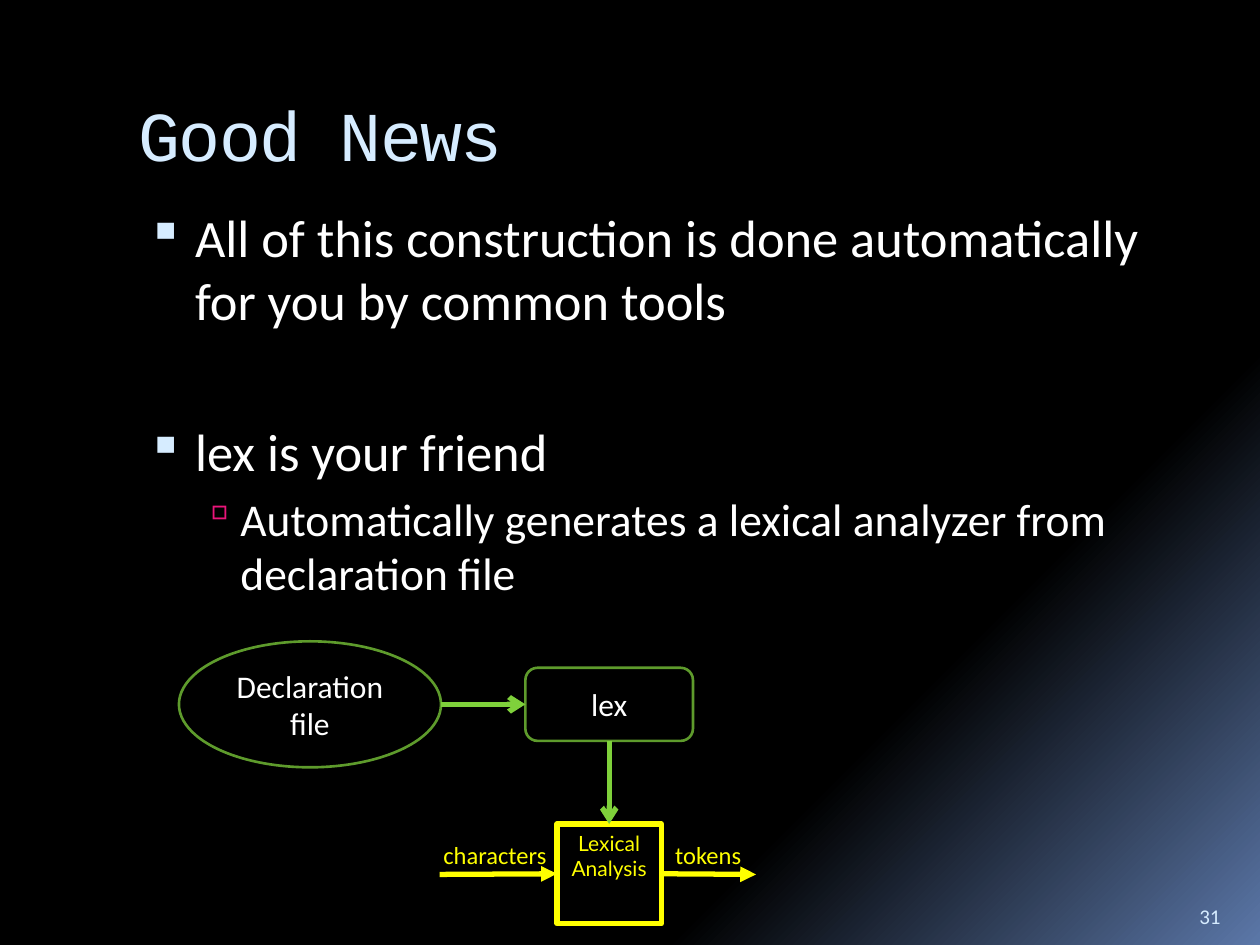
import pptx
import pptx.util
import pptx.dml.color
import pptx.enum.shapes
import pptx.enum.text
import pptx.oxml.ns
from collections import namedtuple
from dataclasses import dataclass
from lxml import etree
from pptx.util import Inches, Pt

MSO_SHAPE = pptx.enum.shapes.MSO_SHAPE
ANCHOR = pptx.enum.text.MSO_ANCHOR
ALIGN = pptx.enum.text.PP_ALIGN
RGB = pptx.dml.color.RGBColor.from_string
qn = pptx.oxml.ns.qn

Box = namedtuple("Box", "left top width height")
Bullet = namedtuple("Bullet", "text level space_before")


@dataclass(frozen=True)
class Theme:
    """Colours, fonts and type sizes of the deck."""
    night: str = "000000"
    horizon: str = "5B77A8"
    heading: str = "D6ECFF"
    text: str = "FFFFFF"
    sub_bullet: str = "EA157A"
    outline: str = "5E9B2C"
    flow: str = "7FD13B"
    phase: str = "FFFF00"
    heading_font: str = "Courier New"
    body_font: str = "Calibri"
    phase_font: str = "Lato"
    heading_size: int = 40
    body_sizes: tuple = (30, 26)
    node_size: int = 18
    stream_size: int = 14
    small_size: int = 12


THEME = Theme()


def inches(box):
    """Convert a box in inches to lengths."""
    return [Inches(value) for value in box]


def within(box, left, top, width, height):
    """Return a part's box, given its offset inside an outer box."""
    return Box(box.left + left, box.top + top, width, height)


def style(paragraph, size, color, font=THEME.body_font):
    """Set the type of a whole paragraph."""
    paragraph.font.size = Pt(size)
    paragraph.font.name = font
    paragraph.font.color.rgb = RGB(color)


def add_label(slide, box, text, size, color, anchor=ANCHOR.TOP, wrap=True):
    """Add a text box with one paragraph."""
    label = slide.shapes.add_textbox(*inches(box))
    frame = label.text_frame
    frame.word_wrap = wrap
    frame.vertical_anchor = anchor
    frame.text = text
    style(frame.paragraphs[0], size, color)


def add_node(slide, kind, box, text, line, weight, size, color,
             font=THEME.body_font, anchor=ANCHOR.MIDDLE):
    """Add an outlined, unfilled shape with centred text."""
    node = slide.shapes.add_shape(kind, *inches(box))
    node.shadow.inherit = False
    node.fill.background()
    node.line.color.rgb = RGB(line)
    node.line.width = Pt(weight)
    frame = node.text_frame
    frame.word_wrap = True
    frame.vertical_anchor = anchor
    frame.text = text
    frame.paragraphs[0].alignment = ALIGN.CENTER
    style(frame.paragraphs[0], size, color, font)
    return node


def add_arrow(slide, start, end, color, head, source=None, target=None):
    """Add an arrow; source and target are (shape, side) pairs to join."""
    arrow = slide.shapes.add_connector(
        pptx.enum.shapes.MSO_CONNECTOR.STRAIGHT, *inches(start + end))
    if source:
        arrow.begin_connect(*source)
    if target:
        arrow.end_connect(*target)
    arrow.line.color.rgb = RGB(color)
    arrow.line.width = Pt(3)
    etree.SubElement(arrow.line._get_or_add_ln(), qn("a:tailEnd"), type=head)
    etree.SubElement(arrow._element.spPr, qn("a:effectLst"))


def paint_background(slide):
    """Fade the slide from black to blue in the lower right corner."""
    fill = slide.background.fill
    fill.gradient()
    fill.gradient_angle = 315
    fades = ((0.73, THEME.night), (1.0, THEME.horizon))
    for stop, (position, color) in zip(fill.gradient_stops, fades):
        stop.position = position
        stop.color.rgb = RGB(color)


def place_title(slide, box, text):
    """Move and format the title placeholder."""
    title = slide.shapes.title
    title.left, title.top, title.width, title.height = inches(box)
    frame = title.text_frame
    frame.text = text
    frame.vertical_anchor = ANCHOR.MIDDLE
    heading = frame.paragraphs[0]
    heading.alignment = ALIGN.LEFT
    style(heading, THEME.heading_size, THEME.heading, THEME.heading_font)
    heading.runs[0]._r.get_or_add_rPr().set("spc", "-100")


def place_bullets(slide, box, bullets):
    """Write the two-level bulleted text."""
    frame = slide.shapes.add_textbox(*inches(box)).text_frame
    frame.word_wrap = True
    marks = (("▪", THEME.heading, 95, 0.45, -0.38),
             ("▫", THEME.sub_bullet, 90, 0.81, -0.31))
    for index, bullet in enumerate(bullets):
        paragraph = frame.add_paragraph() if index else frame.paragraphs[0]
        paragraph.text = bullet.text
        paragraph.level = bullet.level
        paragraph.space_before = Pt(bullet.space_before)
        style(paragraph, THEME.body_sizes[bullet.level], THEME.text)
        mark, color, percent, margin, indent = marks[bullet.level]
        props = paragraph._p.get_or_add_pPr()
        props.set("marL", str(Inches(margin)))
        props.set("indent", str(Inches(indent)))
        tint = etree.Element(qn("a:buClr"))
        etree.SubElement(tint, qn("a:srgbClr"), val=color)
        size = etree.Element(qn("a:buSzPct"), val=str(percent * 1000))
        char = etree.Element(qn("a:buChar"), char=mark)
        for element in (tint, size, char):
            props.find(qn("a:defRPr")).addprevious(element)


def place_lex_diagram(slide, box):
    """Draw how lex turns a declaration file into a lexical analyzer."""
    green = (THEME.outline, 1.5, THEME.node_size, THEME.text)
    lex = add_node(slide, MSO_SHAPE.ROUNDED_RECTANGLE,
                   within(box, 2.75, 0.21, 1.33, 0.58), "lex", *green)
    add_node(slide, MSO_SHAPE.OVAL, within(box, 0, 0, 2.08, 1),
             "Declaration file", *green)
    analysis = add_node(slide, MSO_SHAPE.RECTANGLE,
                        within(box, 3, 1.45, 0.83, 0.79), "Lexical\vAnalysis",
                        THEME.phase, 3, THEME.small_size, THEME.phase,
                        THEME.phase_font, ANCHOR.TOP)

    def point(x, y):
        """Return a point inside the diagram."""
        return box.left + x, box.top + y

    add_arrow(slide, point(2.08, 0.5), point(2.75, 0.5), THEME.flow, "arrow",
              target=(lex, 1))
    add_arrow(slide, point(3.41, 0.79), point(3.41, 1.45), THEME.flow, "arrow",
              source=(lex, 2), target=(analysis, 0))
    add_arrow(slide, point(2.07, 1.85), point(3, 1.85), THEME.phase, "triangle",
              target=(analysis, 1))
    add_arrow(slide, point(3.83, 1.85), point(4.58, 1.85), THEME.phase,
              "triangle", source=(analysis, 3))
    for text, left, width in (("characters", 2, 1.05), ("tokens", 3.84, 0.75)):
        add_label(slide, within(box, left, 1.53, width, 0.34), text,
                  THEME.stream_size, THEME.phase, wrap=False)


def main():
    """Build and save the slide."""
    deck = pptx.Presentation()
    deck.slide_width, deck.slide_height = Inches(10), Inches(7.5)
    slide = deck.slides.add_slide(deck.slide_layouts.get_by_name("Title Only"))
    paint_background(slide)
    place_title(slide, Box(1, 0.56, 8.5, 1), "Good News")
    place_bullets(slide, Box(1, 1.58, 8.5, 3.42), (
        Bullet("All of this construction is done automatically for you "
               "by common tools", 0, 7),
        Bullet("lex is your friend", 0, 50),
        Bullet("Automatically generates a lexical analyzer from "
               "declaration file", 1, 5.2)))
    add_label(slide, Box(9.42, 7.02, 0.5, 0.4), "31", THEME.small_size,
              THEME.heading, ANCHOR.BOTTOM)
    place_lex_diagram(slide, Box(1.42, 5.09, 4.58, 2.24))
    deck.save("out.pptx")


if __name__ == "__main__":
    main()
